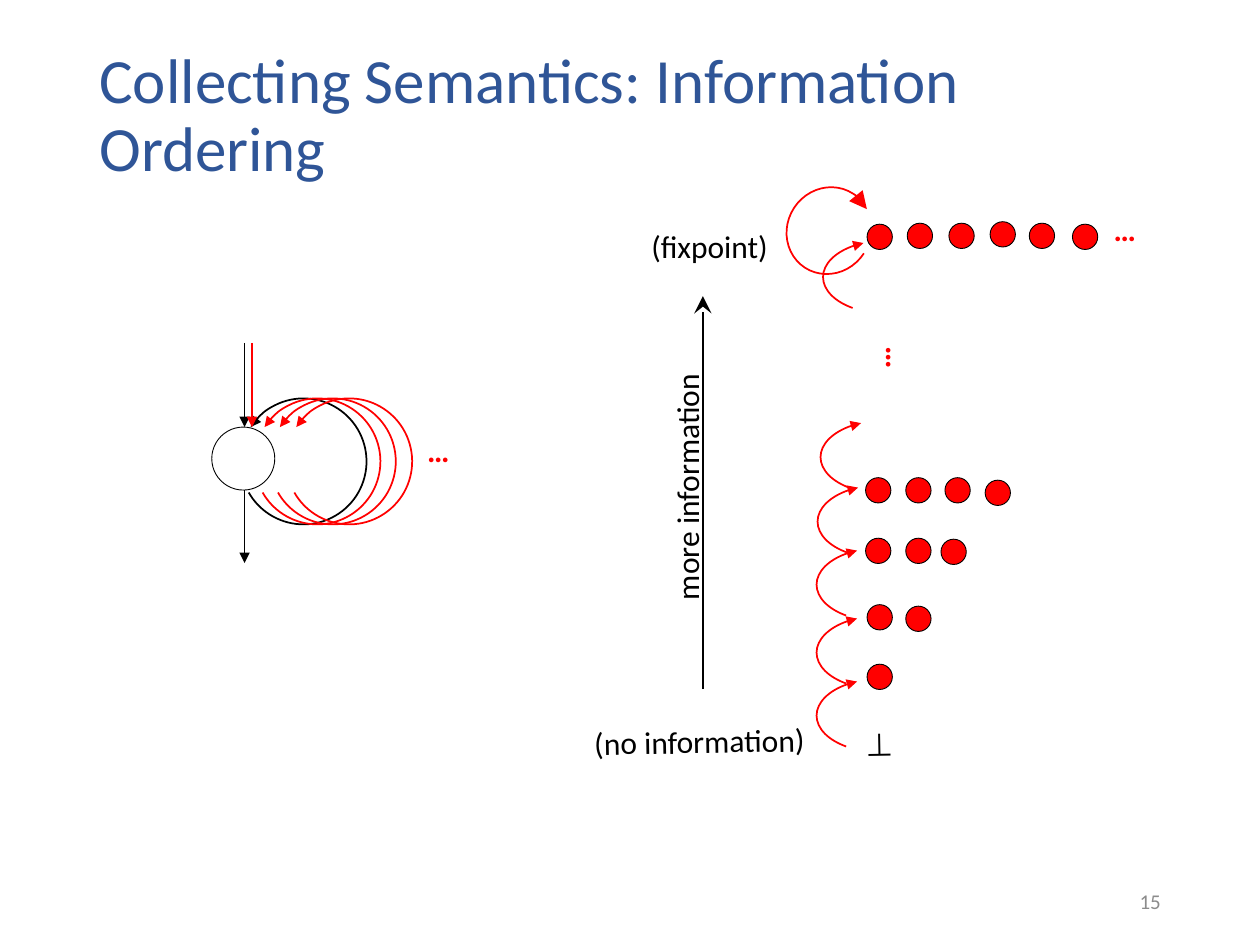
from dataclasses import dataclass

from lxml.etree import SubElement
from pptx import Presentation
from pptx.dml.color import RGBColor
from pptx.enum.shapes import MSO_CONNECTOR as Connector, MSO_SHAPE as Preset
from pptx.enum.text import MSO_ANCHOR as Anchor, PP_ALIGN as Align
from pptx.oxml.ns import qn
from pptx.util import Cm, Pt

BLACK = RGBColor(0x00, 0x00, 0x00)
RED = RGBColor(0xFF, 0x00, 0x00)
BLUE = RGBColor(0x2F, 0x55, 0x97)
GRAY = RGBColor(0x8C, 0x8C, 0x8C)
FONT = "Calibri"

DOT_SIZE = 0.51
LOOP_ANGLES = (162, 124.46)
STEP_ANGLES = (190.35, 33.9)


@dataclass
class Box:
    left: float
    top: float
    width: float
    height: float
    rotation: float = 0

    def lengths(self) -> tuple:
        return Cm(self.left), Cm(self.top), Cm(self.width), Cm(self.height)


@dataclass
class Label:
    text: str
    box: Box
    color: RGBColor = BLACK
    bold: bool = False
    wrap: bool = False


@dataclass
class Arrow:
    start: tuple[float, float]
    end: tuple[float, float]
    color: RGBColor = BLACK
    kind: str = "triangle"
    size: str = "med"


def add_run(paragraph, text: str, size: float, color: RGBColor, bold: bool = False) -> None:
    run = paragraph.add_run()
    run.text = text
    run.font.name = FONT
    run.font.size = Pt(size)
    run.font.bold = bold
    run.font.color.rgb = color


def add_label(slide, label: Label) -> None:
    shape = slide.shapes.add_textbox(*label.box.lengths())
    shape.rotation = label.box.rotation
    shape.text_frame.word_wrap = label.wrap
    add_run(shape.text_frame.paragraphs[0], label.text, 18, label.color, label.bold)


def add_arrowhead(shape, end: str, kind: str = "triangle", size: str = "med") -> None:
    SubElement(shape.line._get_or_add_ln(), qn(f"a:{end}"), type=kind, w=size, len=size)


def add_circle(slide, left: float, top: float, size: float, fill: RGBColor | None = None) -> None:
    shape = slide.shapes.add_shape(Preset.OVAL, Cm(left), Cm(top), Cm(size), Cm(size))
    shape.shadow.inherit = False
    if fill is None:
        shape.fill.background()
    else:
        shape.fill.solid()
        shape.fill.fore_color.rgb = fill
    shape.line.color.rgb = BLACK
    shape.line.width = Pt(0.5)


def add_arc(slide, box: Box, angles: tuple[float, float], color: RGBColor,
            end: str = "tailEnd", size: str = "med") -> None:
    shape = slide.shapes.add_shape(Preset.ARC, *box.lengths())
    shape.rotation = box.rotation
    for index, angle in enumerate(angles):
        shape.adjustments[index] = angle
    shape.shadow.inherit = False
    shape.fill.background()
    shape.line.color.rgb = color
    shape.line.width = Pt(1)
    add_arrowhead(shape, end, size=size)


def add_arrow(slide, arrow: Arrow) -> None:
    points = [Cm(value) for value in arrow.start + arrow.end]
    shape = slide.shapes.add_connector(Connector.STRAIGHT, *points)
    shape.line.color.rgb = arrow.color
    shape.line.width = Pt(1)
    add_arrowhead(shape, "tailEnd", arrow.kind, arrow.size)
    SubElement(shape._element.spPr, qn("a:effectLst"))


# Left, top of each dot, by row from most to least information
DOT_ROWS = [
    [(17.48, 4.52), (18.29, 4.5), (19.13, 4.5), (19.96, 4.47), (20.75, 4.5), (21.62, 4.52)],
    [(17.45, 9.63), (18.26, 9.63), (19.05, 9.63), (19.86, 9.68)],
    [(17.45, 10.85), (18.26, 10.85), (18.97, 10.87)],
    [(17.48, 12.19), (18.26, 12.22)],
    [(17.48, 13.39)],
]
STEPS = [(16.46, 13.69), (16.46, 12.42), (16.46, 11.05),
         (16.48, 9.78), (16.54, 8.48), (16.59, 4.85)]
LOOPS = [(4.85, BLACK), (5.13, RED), (5.44, RED), (5.77, RED)]
ARROWS = [
    Arrow((4.93, 6.91), (4.93, 8.61)),
    Arrow((4.93, 9.88), (4.93, 11.35)),
    Arrow((5.08, 6.91), (5.08, 8.61), RED),
    Arrow((14.17, 13.89), (14.17, 5.97), kind="stealth", size="lg"),
]
LABELS = [
    Label("(fixpoint)", Box(12.88, 4.45, 2.9, 1.02)),
    Label("(no information)", Box(11.73, 14.43, 4.8, 1.02, 359)),
    Label("more information", Box(11.28, 9.27, 5.13, 1.02, 270)),
    Label("⊥", Box(17.2, 14.48, 0.99, 1.12, 359)),
] + [
    Label("…", Box(left, top, 1.22, 1.12, rotation), RED, bold=True, wrap=True)
    for left, top, rotation in [(17.45, 6.78, 90), (22.2, 4.11, 0), (8.36, 8.56, 0)]
]


def add_title(slide, text: str) -> None:
    title = slide.shapes.title
    title.left, title.top, title.width, title.height = Box(1.75, 1.02, 22.58, 2.67).lengths()
    title.text_frame.vertical_anchor = Anchor.MIDDLE
    title.text_frame.word_wrap = True
    paragraph = title.text_frame.paragraphs[0]
    paragraph.alignment = Align.LEFT
    paragraph.line_spacing = 0.9
    add_run(paragraph, text, 36, BLUE)


def add_slide_number(slide, number: str) -> None:
    shape = slide.shapes.add_textbox(*Box(17.93, 17.65, 5.72, 1.02).lengths())
    shape.text_frame.word_wrap = True
    shape.text_frame.vertical_anchor = Anchor.MIDDLE
    paragraph = shape.text_frame.paragraphs[0]
    paragraph.alignment = Align.RIGHT
    add_run(paragraph, number, 12, GRAY)


def main() -> None:
    presentation = Presentation()
    presentation.slide_width, presentation.slide_height = Cm(25.4), Cm(19.05)
    slide = presentation.slides.add_slide(presentation.slide_layouts[5])
    add_title(slide, "Collecting Semantics: Information Ordering")
    add_slide_number(slide, "15")

    # Program node with its loop
    add_circle(slide, 4.27, 8.61, 1.27)
    for left, color in LOOPS:
        add_arc(slide, Box(left, 8.03, 2.54, 2.54, 303), LOOP_ANGLES, color, "headEnd")

    # Information ordering
    for row in DOT_ROWS:
        for left, top in row:
            add_circle(slide, left, top, DOT_SIZE, RED)
    for left, top in STEPS:
        add_arc(slide, Box(left, top, 2.54, 1.47, 180), STEP_ANGLES, RED)
    add_arc(slide, Box(15.82, 3.81, 1.78, 1.68, 123), LOOP_ANGLES, RED, size="lg")

    # Straight arrows and labels
    for arrow in ARROWS:
        add_arrow(slide, arrow)
    for label in LABELS:
        add_label(slide, label)

    presentation.save("out.pptx")


if __name__ == "__main__":
    main()
